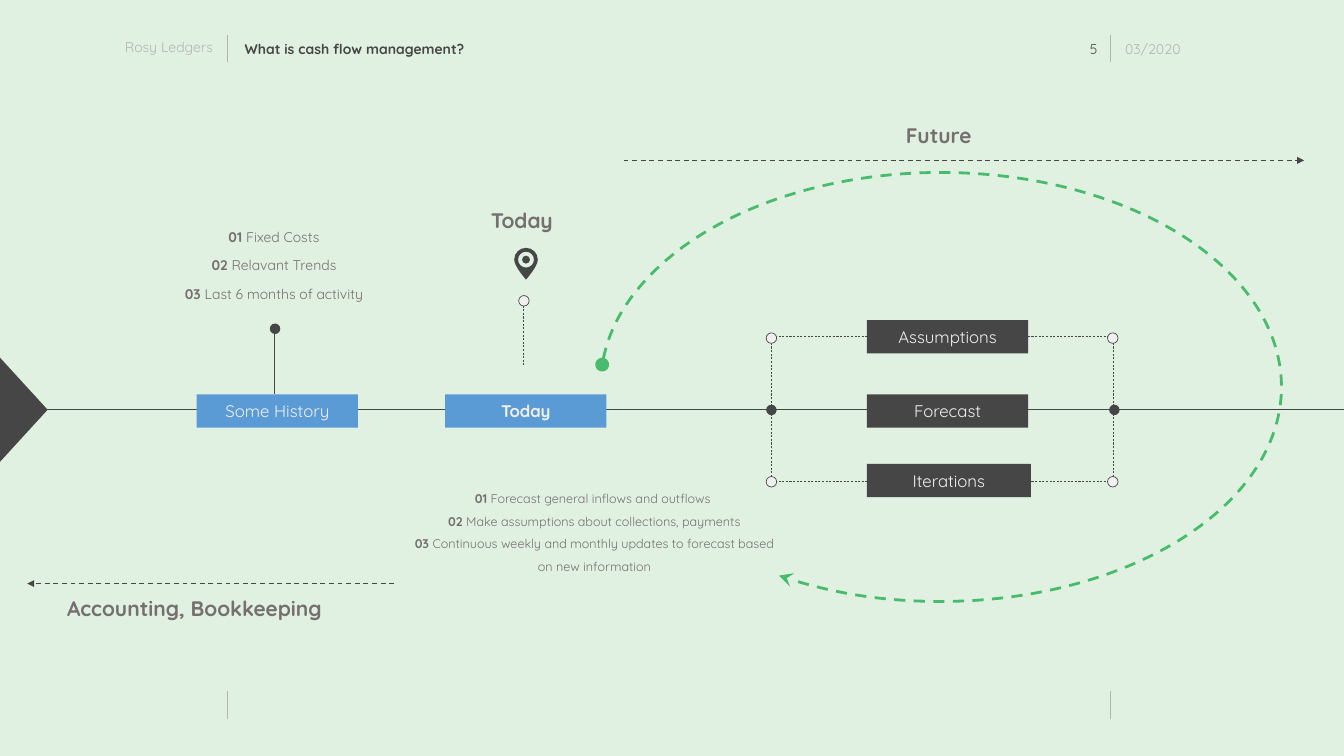
from lxml import etree
from pptx import Presentation
from pptx.dml.color import RGBColor
from pptx.enum.dml import MSO_LINE
from pptx.enum.shapes import MSO_CONNECTOR, MSO_SHAPE
from pptx.enum.text import MSO_ANCHOR, MSO_AUTO_SIZE, PP_ALIGN
from pptx.oxml.ns import qn
from pptx.util import Cm, Pt

MINT = RGBColor(0xE1, 0xF1, 0xE1)
DARK = RGBColor(0x46, 0x46, 0x46)
SILVER = RGBColor(0xB4, 0xB4, 0xB4)
GREY = RGBColor(0x75, 0x70, 0x70)
BLUE = RGBColor(0x5B, 0x9B, 0xD5)
GREEN = RGBColor(0x49, 0xBB, 0x6C)
PALE = RGBColor(0xF0, 0xF0, 0xF0)
DASH = MSO_LINE.DASH
STRAIGHT = MSO_CONNECTOR.STRAIGHT
RECT, OVAL = MSO_SHAPE.RECTANGLE, MSO_SHAPE.OVAL
ARC, TRIANGLE = MSO_SHAPE.ARC, MSO_SHAPE.ISOSCELES_TRIANGLE
LEFT, CENTER, RIGHT = PP_ALIGN.LEFT, PP_ALIGN.CENTER, PP_ALIGN.RIGHT
TOP, MIDDLE = MSO_ANCHOR.TOP, MSO_ANCHOR.MIDDLE
FONT = "Quicksand"
BOX_W, BOX_H = 8.13, 1.68
DOT = 0.53


def set_font(p, size, color, bold=None, align=CENTER):
    p.alignment = align
    p.font.name = FONT
    p.font.size = Pt(size)
    p.font.color.rgb = color
    p.font.bold = bold


def add_text(s, x, y, w, h, text, size, color, bold=False, align=CENTER):
    tf = s.shapes.add_textbox(Cm(x), Cm(y), Cm(w), Cm(h)).text_frame
    tf.word_wrap = True
    p = tf.paragraphs[0]
    p.text = text
    set_font(p, size, color, bold, align)
    return tf


def add_numbered(p, number, text, size):
    for part, bold in ((f"{number:02d} ", True), (text, False)):
        r = p.add_run()
        r.text = part
        r.font.bold = bold
    set_font(p, size, GREY)


def add_ends(shape, **ends):
    ln = shape._element.spPr.find(qn("a:ln"))
    for tag, kind in ends.items():
        etree.SubElement(ln, qn(f"a:{tag}"), type=kind, w="lg", len="lg")


def add_line(s, x1, y1, x2, y2, color=DARK, width=0.75, dash=None):
    c = s.shapes.add_connector(STRAIGHT, Cm(x1), Cm(y1), Cm(x2), Cm(y2))
    c.line.color.rgb = color
    c.line.width = Pt(width)
    if dash:
        c.line.dash_style = dash
    etree.SubElement(c._element.spPr, qn("a:effectLst"))
    return c


def add_arrow(s, x1, x2, y):
    add_ends(add_line(s, x1, y, x2, y, DARK, 1.75, DASH), tailEnd="triangle")


def set_fill(sp, color):
    sp.shadow.inherit = False
    sp.fill.solid()
    sp.fill.fore_color.rgb = color
    sp.line.fill.background()


def add_filled(s, kind, x, y, w, h, color):
    sp = s.shapes.add_shape(kind, Cm(x), Cm(y), Cm(w), Cm(h))
    set_fill(sp, color)
    return sp


def add_box(s, x, y, text, color, bold=False, w=BOX_W):
    tf = add_filled(s, RECT, x, y, w, BOX_H, color).text_frame
    tf.vertical_anchor = MIDDLE
    p = tf.paragraphs[0]
    p.text = text
    set_font(p, 24, PALE, bold)


def add_dot(s, cx, cy, hollow=False):
    sp = add_filled(s, OVAL, cx - DOT / 2, cy - DOT / 2, DOT, DOT, PALE if hollow else DARK)
    if hollow:
        sp.line.color.rgb = DARK
        sp.line.width = Pt(1)


def curve_segments(sp):
    for path in sp._element.iter(qn("a:path")):
        segments = path.findall(qn("a:lnTo"))
        for i in range(0, len(segments), 3):
            curve = etree.Element(qn("a:cubicBezTo"))
            segments[i].addprevious(curve)
            for segment in segments[i:i + 3]:
                curve.append(segment[0])
                path.remove(segment)


def add_pin(s, x, y, w, h):
    r = w / 2

    def ring(a, turn):
        k = 0.55 * a
        points = [(0, -a), (-k, -a), (-a, -k), (-a, 0), (-a, k), (-k, a), (0, a),
                  (k, a), (a, k), (a, 0), (a, -k), (k, -a), (0, -a)]
        return [(r + turn * px, r + py) for px, py in points]

    k = 0.45 * r
    outline = [(r, h), (r, h), (0, 0.94), (0, r), (0, k), (k, 0), (r, 0),
               (w - k, 0), (w, k), (w, r), (w, 0.94), (r, h), (r, h)]
    fb = s.shapes.build_freeform(Cm(x + r), Cm(y + h))
    for contour in (outline, ring(0.4, 1), ring(0.2, -1)):
        pts = [(Cm(x + px), Cm(y + py)) for px, py in contour]
        if contour is not outline:
            fb.move_to(*pts[0])
        fb.add_line_segments(pts[1:], close=True)
    sp = fb.convert_to_shape()
    curve_segments(sp)
    set_fill(sp, DARK)


def add_ticks(s, y):
    for x in (11.43, 55.96):
        add_line(s, x, y, x, y + 1.39, SILVER)


def add_header(s, y):
    add_ticks(s, y)
    add_text(s, 1.68, y + 0.05, 9.3, 1.12, "Rosy Ledgers", 20, SILVER, align=RIGHT)
    add_text(s, 53.24, y + 0.15, 2.31, 1.12, "5", 20, DARK, align=RIGHT)
    add_text(s, 56.44, y + 0.15, 9.3, 1.12, "03/2020", 20, SILVER, align=LEFT)
    title = s.shapes.title
    title.left, title.top, title.width, title.height = Cm(12.07), Cm(y + 0.15), Cm(11.86), Cm(1.12)
    tf = title.text_frame
    tf.text = "What is cash flow management?"
    tf.auto_size = MSO_AUTO_SIZE.NONE
    tf.vertical_anchor = TOP
    set_font(tf.paragraphs[0], 20, DARK, True, LEFT)


def add_timeline(s, y, width):
    add_line(s, 0, y, width, y)
    w, h = 5.38, 2.46
    add_filled(s, TRIANGLE, 1.17 - w / 2, y - h / 2, w, h, DARK).rotation = 90


def add_history(s, x, y):
    items = ("Fixed Costs", "Relavant Trends", "Last 6 months of activity")
    for i, text in enumerate(items):
        tf = add_text(s, x, y + 1.44 * i, 10.85, 1.12, "", 20, GREY, None)
        add_numbered(tf.paragraphs[0], i + 1, text, 20)
    add_line(s, x + 5.44, y + 5.1, x + 5.44, y + 8.5)
    add_dot(s, x + 5.48, y + 5.2)
    add_box(s, x + 1.53, y + 8.5, "Some History", BLUE)


def add_today(s, x, y):
    add_text(s, x + 0.91, y, 9.96, 1.55, "Today ", 30, GREY, True)
    add_pin(s, x + 5.36, y + 2.15, 1.19, 1.6)
    add_line(s, x + 5.84, y + 4.7, x + 5.84, y + 8.12, dash=DASH)
    add_dot(s, x + 5.85, y + 4.82, hollow=True)
    add_box(s, x + 1.88, y + 9.53, "Today", BLUE, True)
    notes = (
        "Forecast general inflows and outflows ",
        "Make assumptions about collections, payments",
        "Continuous weekly and monthly updates to forecast based on new information",
    )
    tf = add_text(s, x, y + 13.9, 18.8, 5.89, "", 18, GREY, None)
    for i, note in enumerate(notes):
        p = tf.add_paragraph() if i else tf.paragraphs[0]
        add_numbered(p, i + 1, note, 18)
        p.line_spacing = 1.5


def add_forecast(s, x, y, w, h):
    middle = y + 3.69
    for side in (x, x + w):
        for end in (y, y + h):
            add_line(s, side, middle, side, end, dash=DASH)
    for end in (y, y + h):
        add_line(s, x, end, x + w, end, dash=DASH)
    rows = (
        ("Assumptions", y - 0.84, BOX_W, y + 0.07, True),
        ("Forecast", y + 2.9, BOX_W, middle, False),
        ("Iterations", y + 6.41, 8.26, y + h + 0.02, True),
    )
    for text, top, box_w, cy, hollow in rows:
        add_box(s, x + 4.81, top, text, DARK, w=box_w)
        add_dot(s, x, cy, hollow)
        add_dot(s, x + w + (0 if hollow else 0.08), cy, hollow)


def add_future(s, x, y, w):
    add_text(s, x + 11.05, y, 9.96, 1.55, "Future ", 30, GREY, True)
    add_arrow(s, x, x + w, y + 2.01)
    loop = s.shapes.add_shape(ARC, Cm(x + 5.18), Cm(y - 3.73), Cm(21.62), Cm(34.32))
    loop.shadow.inherit = False
    loop.rotation = 270
    loop.adjustments[0], loop.adjustments[1] = 164.264, 132.395
    loop.fill.background()
    loop.line.color.rgb = GREEN
    loop.line.width = Pt(4)
    loop.line.dash_style = DASH
    add_ends(loop, headEnd="oval", tailEnd="stealth")


def add_past(s, x, y, w):
    add_arrow(s, x + w, x, y)
    add_text(s, x + 1.02, y + 0.46, 15.11, 1.55, "Accounting, Bookkeeping ", 30, GREY, True)


def main():
    prs = Presentation()
    prs.slide_width, prs.slide_height = Cm(67.72), Cm(38.1)
    s = prs.slides.add_slide(prs.slide_layouts[5])
    s.background.fill.solid()
    s.background.fill.fore_color.rgb = MINT
    add_header(s, 1.75)
    add_ticks(s, 34.83)
    add_timeline(s, 20.65, 67.72)
    add_history(s, 8.38, 11.37)
    add_today(s, 20.55, 10.34)
    add_forecast(s, 38.87, 16.97, 17.2, 7.29)
    add_future(s, 31.42, 6.07, 34.29)
    add_past(s, 1.37, 29.41, 18.49)
    prs.save("out.pptx")


if __name__ == "__main__":
    main()
